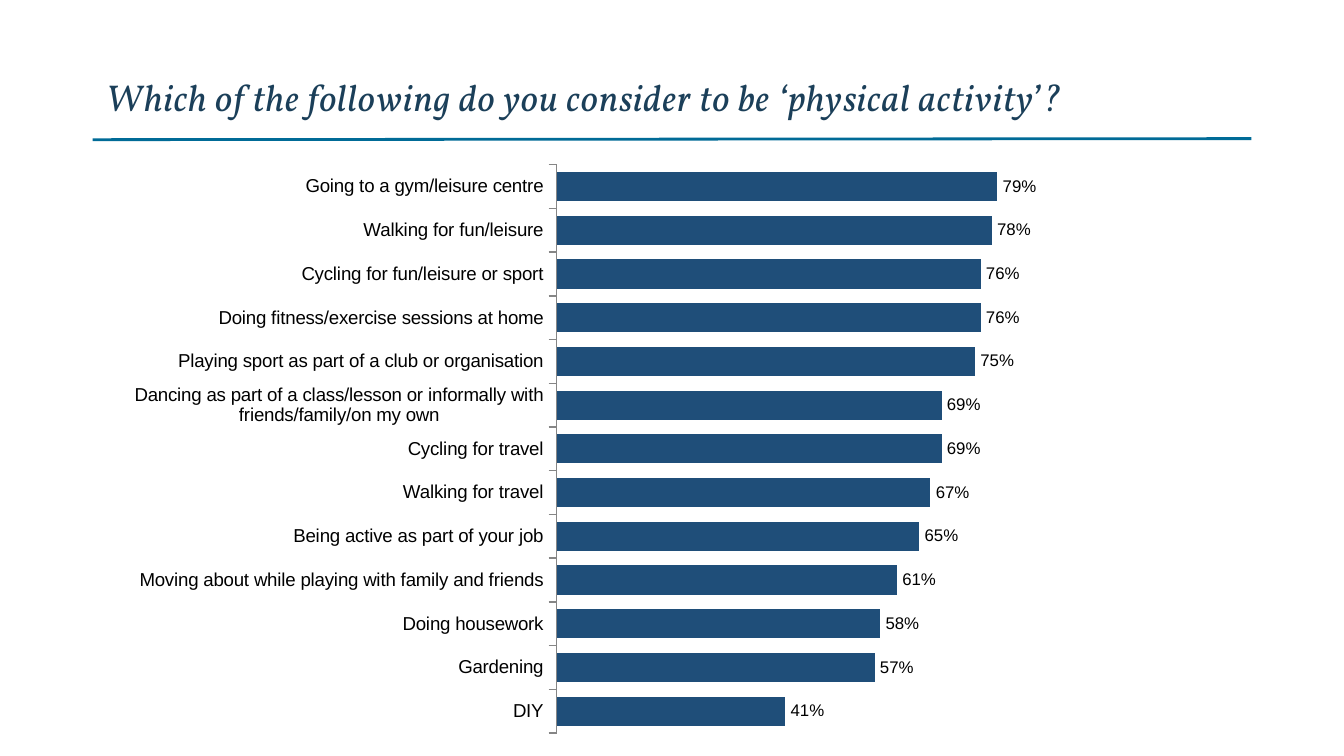
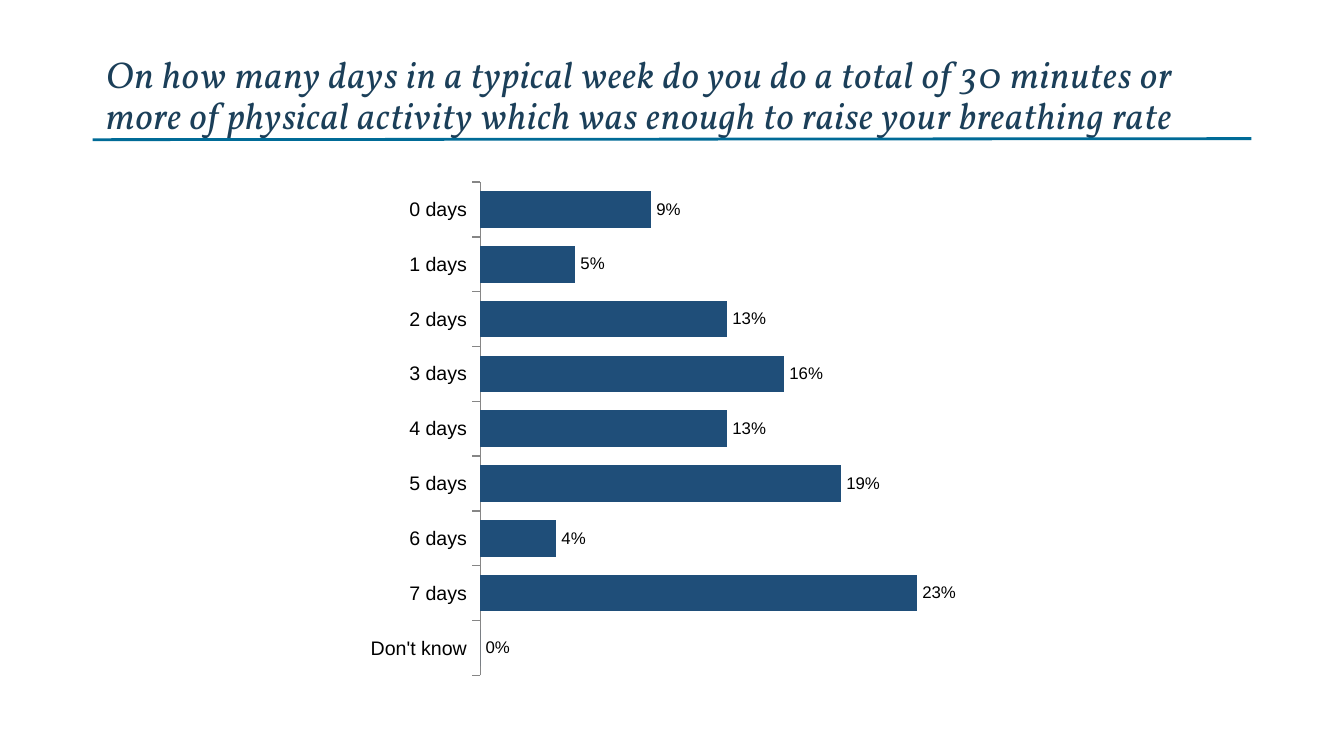
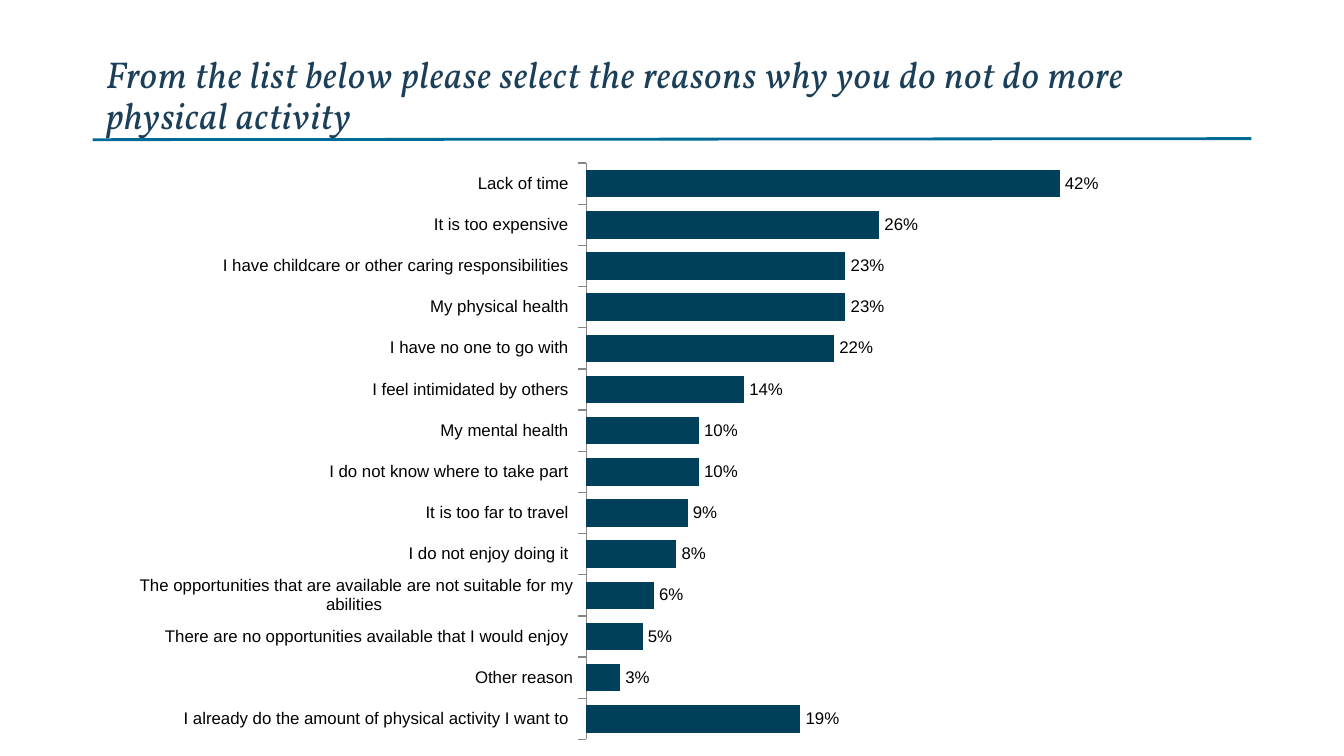
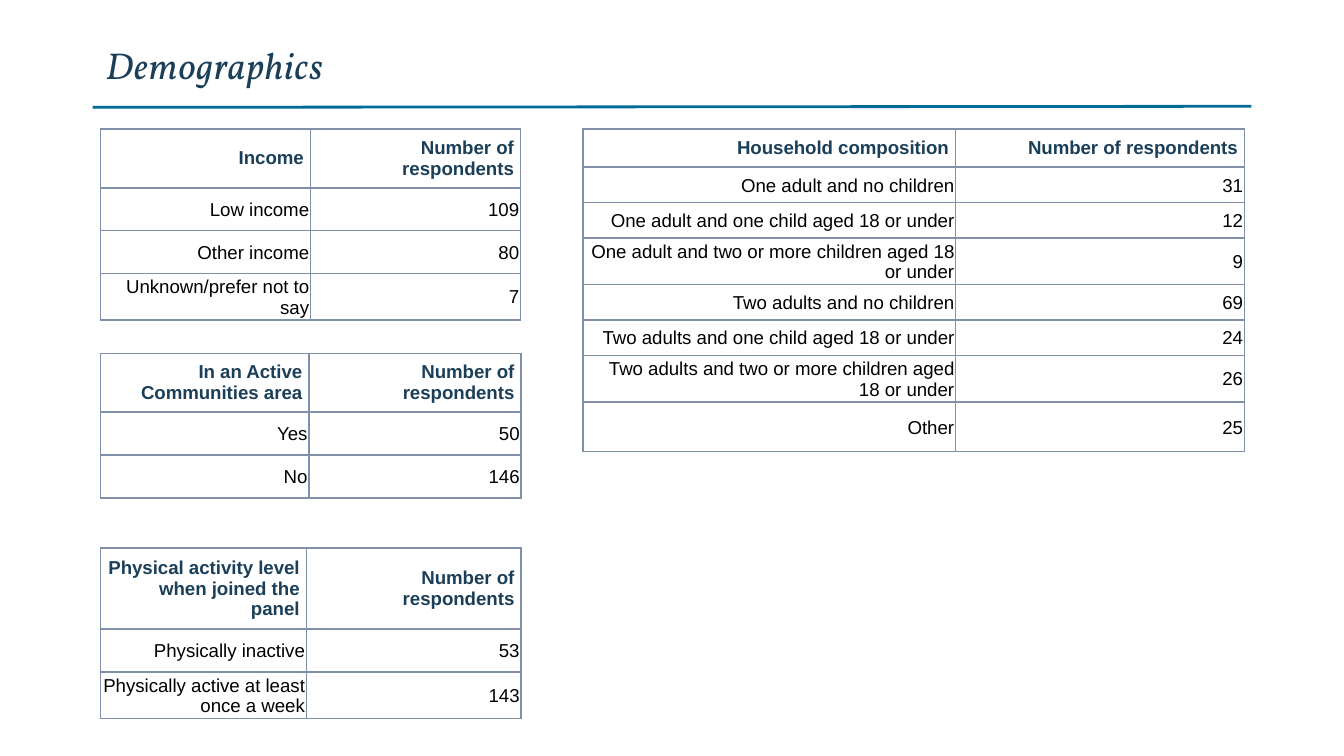
"""Build four survey result slides: three bar charts and a page of demographic tables."""
from dataclasses import dataclass

from lxml import etree
from pptx import Presentation
from pptx import util as u
from pptx.chart.data import CategoryChartData
from pptx.dml.color import RGBColor
from pptx.enum import chart as charts
from pptx.enum import shapes, text
from pptx.oxml import parse_xml
from pptx.oxml.ns import nsdecls, qn
from pptx.slide import Slide

NAVY, TEAL, BLUE, DEEP = "1B3F59", "006B97", "1F4E79", "00405B"
BLACK, GRID, AXIS = "000000", "8090A8", "868686"
TITLE_FONT, BODY_FONT = "Vollkorn", "Arial"
COUNT = "Number of respondents"


@dataclass(frozen=True)
class Heading:
    """A slide title with the rule below it, in centimetres."""
    question: str
    top: float = 0.15
    height: float = 2.57
    rule: float = 2.64


@dataclass(frozen=True)
class Survey:
    """A ranked bar chart of answers in percent."""
    heading: Heading
    box: tuple[float, float, float, float]
    answers: dict[str, int]
    limit: float
    label_size: float
    offset: float = 0.448
    bar: str = BLUE


@dataclass(frozen=True)
class Breakdown:
    """A two-column table of respondent counts."""
    topic: str
    left: float
    top: float
    columns: tuple[float, float]
    heights: tuple[float, ...]
    counts: dict[str, int]


SURVEYS = [
    Survey(
        Heading("Which of the following do you consider to be ‘physical activity’?", -0.61, 3.0),
        (2.03, 3.1, 18.95, 10.77),
        {
            "Going to a gym/leisure centre": 79,
            "Walking for fun/leisure": 78,
            "Cycling for fun/leisure or sport": 76,
            "Doing fitness/exercise sessions at home": 76,
            "Playing sport as part of a club or organisation": 75,
            "Dancing as part of a class/lesson or informally with friends/family/on my own": 69,
            "Cycling for travel": 69,
            "Walking for travel": 67,
            "Being active as part of your job": 65,
            "Moving about while playing with family and friends": 61,
            "Doing housework": 58,
            "Gardening": 57,
            "DIY": 41,
        },
        limit=0.9, label_size=10),
    Survey(
        Heading("On how many days in a typical week do you do a total of 30 minutes or more "
                "of physical activity which was enough to raise your breathing rate"),
        (1.09, 3.43, 17.91, 9.35),
        {
            "0 days": 9, "1 days": 5, "2 days": 13, "3 days": 16, "4 days": 13,
            "5 days": 19, "6 days": 4, "7 days": 23, "Don't know": 0,
        },
        limit=0.25, label_size=10.5, offset=0.446),
    Survey(
        Heading("From the list below please select the reasons why you do not do more "
                "physical activity"),
        (2.51, 3.07, 19.13, 10.92),
        {
            "Lack of time ": 42,
            "It is too expensive ": 26,
            "I have childcare or other caring responsibilities ": 23,
            "My physical health ": 23,
            "I have no one to go with ": 22,
            "I feel intimidated by others ": 14,
            "My mental health ": 10,
            "I do not know where to take part ": 10,
            "It is too far to travel ": 9,
            "I do not enjoy doing it ": 8,
            "The opportunities that are available are not suitable for my abilities ": 6,
            "There are no opportunities available that I would enjoy ": 5,
            "Other reason": 3,
            "I already do the amount of physical activity I want to ": 19,
        },
        limit=0.45, label_size=9, bar=DEEP),
]

DEMOGRAPHICS = Heading("Demographics", -1.22, 3.0, 2.03)
BREAKDOWNS = [
    Breakdown("Income", 1.9, 2.44, (3.97, 3.97), (1.04, 0.81, 0.81, 0.81),
              {"Low income": 109, "Other income": 80, "Unknown/prefer not to say": 7}),
    Breakdown("In an Active Communities area", 1.9, 6.68, (3.94, 4.01), (1.04, 0.81, 0.81),
              {"Yes": 50, "No": 146}),
    Breakdown("Physical activity level when joined the panel", 1.9, 10.36, (3.89, 4.06),
              (1.45, 0.81, 0.86),
              {"Physically inactive": 53, "Physically active at least once a week": 143}),
    Breakdown("Household composition", 11.02, 2.44, (7.04, 5.46),
              (0.72, *[0.67] * 6, 0.94),
              {
                  "One adult and no children": 31,
                  "One adult and one child aged 18 or under": 12,
                  "One adult and two or more children aged 18 or under": 9,
                  "Two adults and no children": 69,
                  "Two adults and one child aged 18 or under": 24,
                  "Two adults and two or more children aged 18 or under": 26,
                  "Other": 25,
              }),
]


def rgb(code: str) -> RGBColor:
    """Turn a hex string into a colour."""
    return RGBColor.from_string(code)


def write(frame, content: str, *, font: str = BODY_FONT, size: float = 10,
          color: str = BLACK, bold: bool = False, italic: bool = False,
          align=text.PP_ALIGN.LEFT, leading: float = 1.0, tracking: float = 0) -> None:
    """Fill a text frame with one formatted paragraph."""
    frame.word_wrap = True
    paragraph = frame.paragraphs[0]
    paragraph.alignment = align
    paragraph.line_spacing = leading
    run = paragraph.add_run()
    run.text = content
    run.font.name, run.font.size = font, u.Pt(size)
    run.font.bold, run.font.italic = bold, italic
    run.font.color.rgb = rgb(color)
    if tracking:
        run._r.get_or_add_rPr().set("spc", str(round(tracking * 100)))


def draw_heading(slide: Slide, heading: Heading) -> None:
    """Draw the slide title and its rule."""
    left, width = 1.75, 21.9
    title = slide.shapes.add_textbox(
        u.Cm(left), u.Cm(heading.top), u.Cm(width), u.Cm(heading.height))
    title.text_frame.vertical_anchor = text.MSO_ANCHOR.BOTTOM
    write(title.text_frame, heading.question, font=TITLE_FONT, size=20, color=NAVY,
          italic=True, leading=0.9, tracking=0.5)
    rule = slide.shapes.add_connector(
        shapes.MSO_CONNECTOR.STRAIGHT, u.Cm(left), u.Cm(heading.rule),
        u.Cm(left + width), u.Cm(heading.rule - 0.02))
    rule.line.color.rgb = rgb(TEAL)
    rule.line.width = u.Pt(1.5)
    etree.SubElement(rule._element.spPr, qn("a:effectLst"))


def place_plot(chart, offset: float) -> None:
    """Fix the inner plot area as fractions of the chart."""
    area = chart._chartSpace.chart.plotArea
    for layout in area.findall(qn("c:layout")):
        area.remove(layout)
    modes = '<c:layoutTarget val="inner"/><c:xMode val="edge"/><c:yMode val="edge"/>'
    fractions = {"x": offset, "y": 0, "w": 0.501, "h": 1}
    sides = "".join(f'<c:{side} val="{part}"/>' for side, part in fractions.items())
    area.insert(0, parse_xml(
        f'<c:layout {nsdecls("c")}><c:manualLayout>{modes}{sides}</c:manualLayout></c:layout>'))


def draw_survey(slide: Slide, survey: Survey) -> None:
    """Draw the bar chart of one question."""
    results = CategoryChartData(number_format="0%")
    results.categories = list(survey.answers)
    results.add_series("Series 1", [share / 100 for share in survey.answers.values()])
    chart = slide.shapes.add_chart(
        charts.XL_CHART_TYPE.BAR_CLUSTERED, *map(u.Cm, survey.box), results).chart
    chart.has_legend = chart.has_title = False
    chart.font.name, chart.font.size = BODY_FONT, u.Pt(9)
    chart.font.color.rgb = rgb(BLACK)

    answers = chart.category_axis
    answers.reverse_order = True
    answers.major_tick_mark = charts.XL_TICK_MARK.OUTSIDE
    answers.has_major_gridlines = False
    answers.tick_labels.font.size = u.Pt(survey.label_size)
    answers.format.line.color.rgb = rgb(AXIS)
    answers.format.line.width = u.Pt(0.75)

    shares = chart.value_axis
    shares.minimum_scale, shares.maximum_scale = 0, survey.limit
    shares.has_major_gridlines = False
    shares.visible = False

    bars = chart.plots[0]
    bars.gap_width = 50
    bars.vary_by_categories = False
    fill = bars.series[0].format.fill
    fill.solid()
    fill.fore_color.rgb = rgb(survey.bar)
    labels = bars.series[0].data_labels
    labels.show_value = True
    labels.number_format, labels.number_format_is_linked = "0%", False
    labels.position = charts.XL_LABEL_POSITION.OUTSIDE_END
    place_plot(chart, survey.offset)


def draw_cell(cell, content: str, header: bool) -> None:
    """Write one bordered table cell."""
    inset = u.Cm(0.13 if header else 0.03)
    cell.margin_left = cell.margin_right = cell.margin_top = inset
    cell.margin_bottom = inset if header else 0
    cell.vertical_anchor = text.MSO_ANCHOR.MIDDLE
    cell.fill.background()
    write(cell.text_frame, content, color=NAVY if header else BLACK, bold=header,
          align=text.PP_ALIGN.RIGHT)
    properties = cell._tc.get_or_add_tcPr()
    for place, side in enumerate(("lnL", "lnR", "lnT", "lnB")):
        properties.insert(place, parse_xml(
            f'<a:{side} {nsdecls("a")} w="{u.Pt(1)}"><a:solidFill>'
            f'<a:srgbClr val="{GRID}"/></a:solidFill></a:{side}>'))


def draw_breakdown(slide: Slide, breakdown: Breakdown) -> None:
    """Draw one table of respondent counts."""
    rows = [(breakdown.topic, COUNT), *breakdown.counts.items()]
    table = slide.shapes.add_table(
        len(rows), 2, u.Cm(breakdown.left), u.Cm(breakdown.top),
        u.Cm(sum(breakdown.columns)), u.Cm(sum(breakdown.heights))).table
    table.horz_banding = False
    for column, width in zip(table.columns, breakdown.columns):
        column.width = u.Cm(width)
    for index, (row, height) in enumerate(zip(rows, breakdown.heights)):
        table.rows[index].height = u.Cm(height)
        for cell, content in zip(table.rows[index].cells, row):
            draw_cell(cell, str(content), header=index == 0)


def main() -> None:
    """Build and save the presentation."""
    deck = Presentation()
    deck.slide_width, deck.slide_height = u.Cm(25.4), u.Cm(14.29)
    blank = deck.slide_layouts[6]
    for survey in SURVEYS:
        slide = deck.slides.add_slide(blank)
        draw_heading(slide, survey.heading)
        draw_survey(slide, survey)
    slide = deck.slides.add_slide(blank)
    draw_heading(slide, DEMOGRAPHICS)
    for breakdown in BREAKDOWNS:
        draw_breakdown(slide, breakdown)
    deck.save("out.pptx")


if __name__ == "__main__":
    main()
